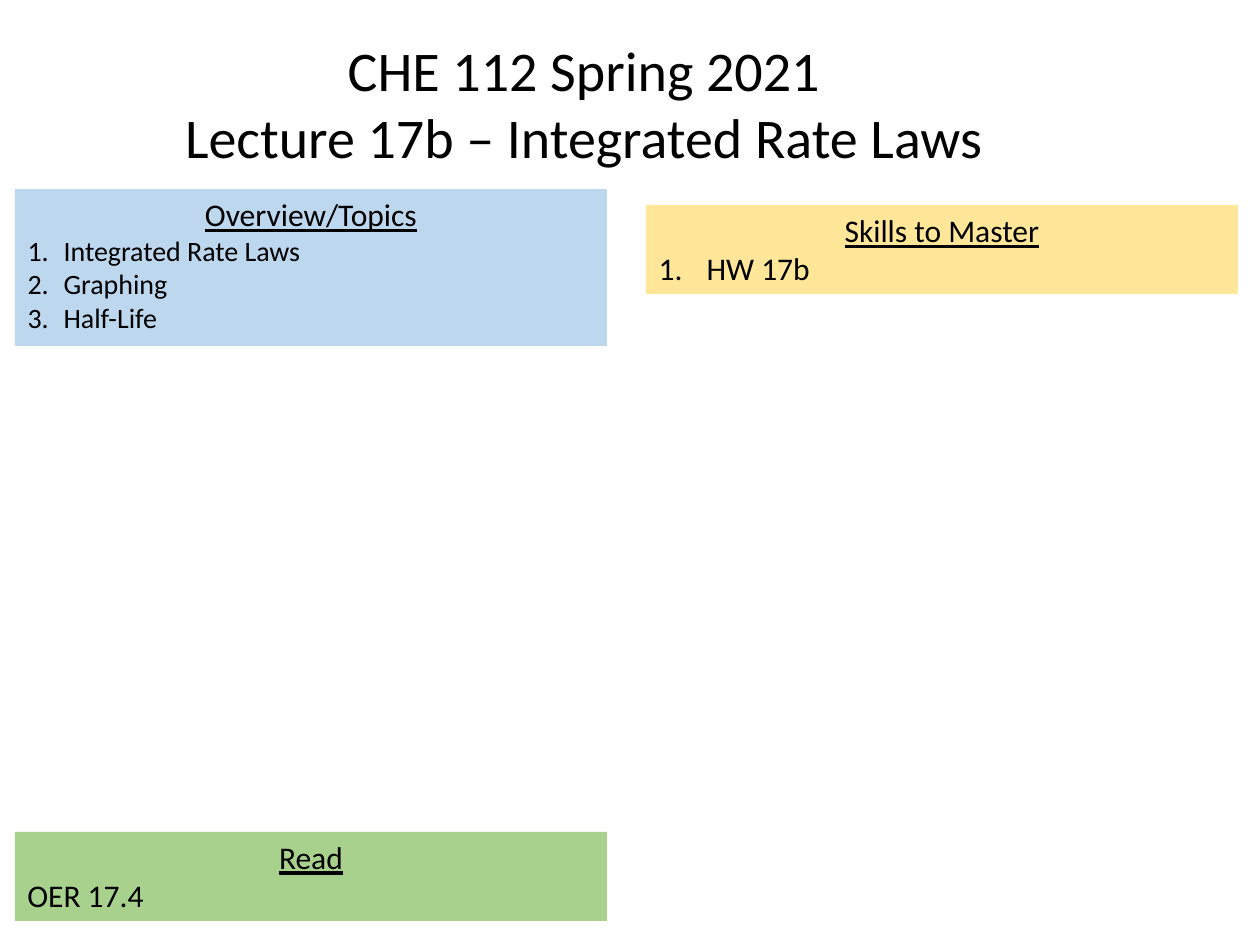
import pptx
import pptx.util
import pptx.dml.color
import pptx.enum.text
import pptx.oxml.ns
import lxml.etree

PX = 914400 // 126
THEME = {
    "font": "Calibri",
    "text": "000000",
    "overview": "BDD7EE",
    "skills": "FFE699",
    "read": "A9D18E",
    "title_size": 32,
    "heading_size": 18,
    "topic_size": 16,
}
ALIGN = pptx.enum.text.PP_ALIGN


def write(tf, text, size=18, align=ALIGN.LEFT, underline=False, number_indent=0, first=False):
    p = tf.paragraphs[0] if first else tf.add_paragraph()
    p.alignment = align
    p.line_spacing = 1.0
    p.space_before = p.space_after = pptx.util.Pt(0)
    pPr = p._p.get_or_add_pPr()
    pPr.set("marL", str(number_indent * PX))
    pPr.set("indent", str(-number_indent * PX))
    if number_indent:
        font = lxml.etree.SubElement(pPr, pptx.oxml.ns.qn("a:buFont"))
        font.set("typeface", "+mj-lt")
        bullet = lxml.etree.SubElement(pPr, pptx.oxml.ns.qn("a:buAutoNum"))
        bullet.set("type", "arabicPeriod")
    else:
        lxml.etree.SubElement(pPr, pptx.oxml.ns.qn("a:buNone"))
    r = p.add_run()
    r.text = text
    r.font.name = THEME["font"]
    r.font.size = pptx.util.Pt(size)
    r.font.underline = underline
    r.font.color.rgb = pptx.dml.color.RGBColor.from_string(THEME["text"])


def place(sp, left, top, width, height):
    sp.left, sp.top, sp.width, sp.height = [v * PX for v in (left, top, width, height)]
    tf = sp.text_frame
    tf.word_wrap = True
    tf.auto_size = pptx.enum.text.MSO_AUTO_SIZE.NONE
    tf.vertical_anchor = pptx.enum.text.MSO_ANCHOR.TOP
    return tf


prs = pptx.Presentation()
prs.slide_width = pptx.util.Inches(10)
prs.slide_height = pptx.util.Inches(7.5)
s = prs.slides.add_slide(prs.slide_layouts.get_by_name("Two Content"))

tf = place(s.shapes.title, 168, 29, 832, 149)
tf.word_wrap = False
for i, line in enumerate(["CHE 112 Spring 2021", "Lecture 17b – Integrated Rate Laws"]):
    write(tf, line, size=THEME["title_size"], align=ALIGN.CENTER, first=i == 0)

overview, skills = s.placeholders[1], s.placeholders[2]
read = s.shapes.add_textbox(0, 0, PX, PX)
panels = [
    (overview, "overview", 15, 189, 157, "Overview/Topics",
     ["Integrated Rate Laws", "Graphing", "Half-Life"], THEME["topic_size"], 36),
    (skills, "skills", 646, 205, 89, "Skills to Master", ["HW 17b"], THEME["heading_size"], 48),
    (read, "read", 15, 832, 89, "Read", ["OER 17.4"], THEME["heading_size"], 0),
]
for sp, color, left, top, height, heading, items, size, indent in panels:
    tf = place(sp, left, top, 592, height)
    sp.fill.solid()
    sp.fill.fore_color.rgb = pptx.dml.color.RGBColor.from_string(THEME[color])
    write(tf, heading, size=THEME["heading_size"], align=ALIGN.CENTER, underline=True, first=True)
    for item in items:
        write(tf, item, size=size, number_indent=indent)

prs.save("out.pptx")
